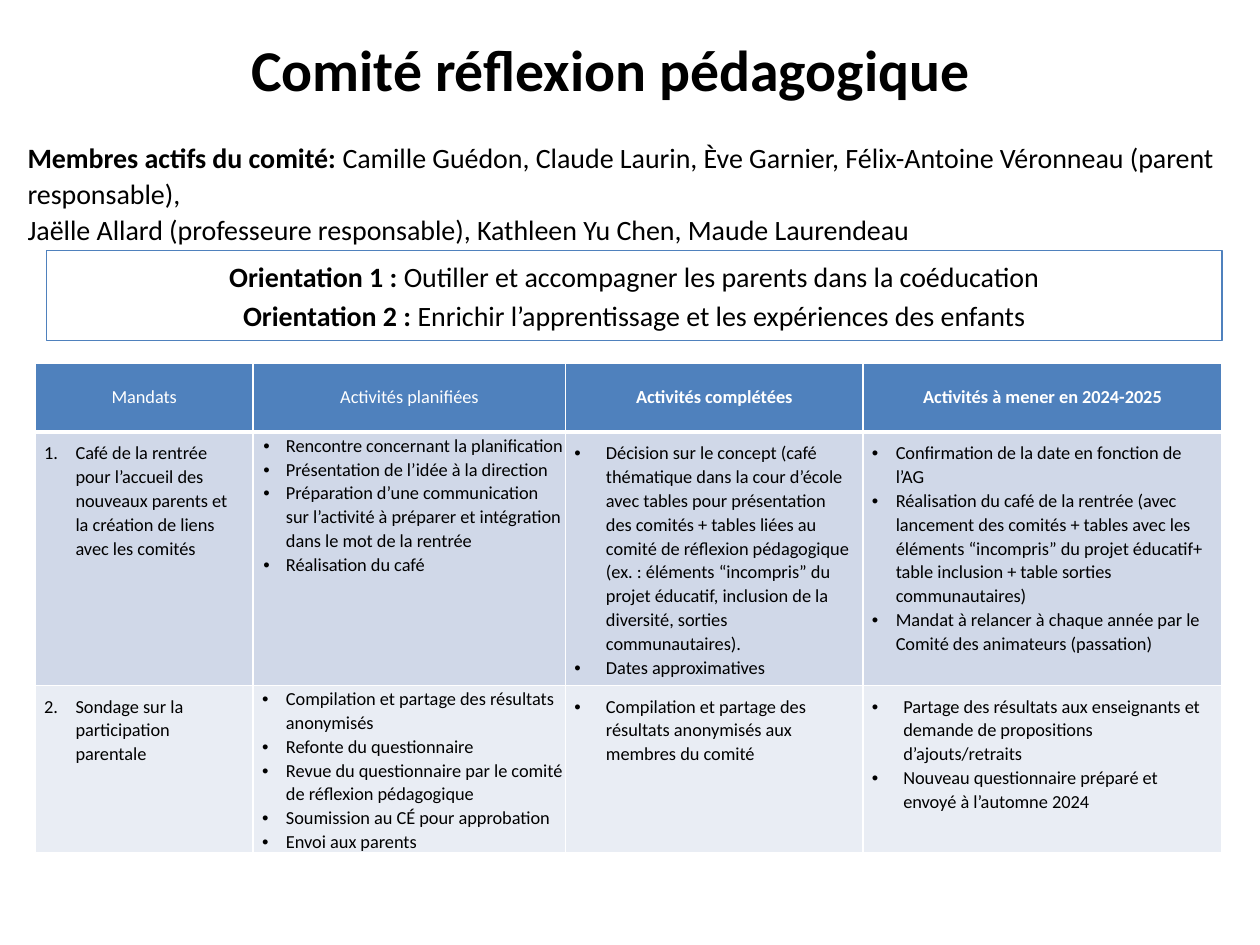
"""Build the slide on the pedagogical reflection committee."""
from lxml import etree
from pptx import Presentation
from pptx import util as u
from pptx.dml.color import RGBColor
from pptx.enum import shapes, text
from pptx.oxml import ns

BLACK = RGBColor(0x00, 0x00, 0x00)
WHITE = RGBColor(0xFF, 0xFF, 0xFF)
BLUE = RGBColor(0x4F, 0x81, 0xBD)
ROW_FILLS = [RGBColor(0xD0, 0xD8, 0xE8), RGBColor(0xE9, 0xED, 0xF4)]
FONT = "Calibri"
CENTER = text.PP_ALIGN.CENTER

TITLE = "Comité réflexion pédagogique"
MEMBERS = [
    [("Membres actifs du comité: ", True),
     ("Camille Guédon, Claude Laurin, Ève Garnier, Félix-Antoine Véronneau (parent responsable),", False)],
    [("Jaëlle Allard (professeure responsable), Kathleen Yu Chen, Maude Laurendeau", False)],
]
ORIENTATIONS = [
    [("Orientation 1 : ", True), ("Outiller et accompagner les parents dans la coéducation", False)],
    [("Orientation 2 : ", True), ("Enrichir l’apprentissage et les expériences des enfants", False)],
]
HEADERS = [("Mandats", False), ("Activités planifiées", False),
           ("Activités complétées", True), ("Activités à mener en 2024-2025", True)]
ROWS = [
    [
        ["Café de la rentrée pour l’accueil des nouveaux parents et la création de liens avec les comités"],
        ["Rencontre concernant la planification",
         "Présentation de l’idée à la direction",
         "Préparation d’une communication sur l’activité à préparer et intégration dans le mot de la rentrée",
         "Réalisation du café"],
        ["Décision sur le concept (café thématique dans la cour d’école avec tables pour présentation "
         "des comités + tables liées au comité de réflexion pédagogique (ex. : éléments “incompris” "
         "du projet éducatif, inclusion de la diversité, sorties communautaires).",
         "Dates approximatives"],
        ["Confirmation de la date en fonction de l’AG",
         "Réalisation du café de la rentrée (avec lancement des comités + tables avec les éléments "
         "“incompris” du projet éducatif+ table inclusion + table sorties communautaires)",
         "Mandat à relancer à chaque année par le Comité des animateurs (passation)"],
    ],
    [
        ["Sondage sur la participation parentale"],
        ["Compilation et partage des résultats anonymisés",
         "Refonte du questionnaire",
         "Revue du questionnaire par le comité de réflexion pédagogique",
         "Soumission au CÉ pour approbation",
         "Envoi aux parents"],
        ["Compilation et partage des résultats anonymisés aux membres du comité"],
        ["Partage des résultats aux enseignants et demande de propositions d’ajouts/retraits",
         "Nouveau questionnaire préparé et envoyé à l’automne 2024"],
    ],
]
COLUMN_WIDTHS = [1.73, 2.48, 2.36, 2.85]
ROW_HEIGHTS = [0.55, 1.79, 1.09]
CELL_INSETS = [0.07, 0.01, 0.07, 0.07]
INDENTS = [[(0.25, 0.25), (0.25, 0.18), (0.25, 0.25), (0.19, 0.19)],
           [(0.25, 0.25), (0.25, 0.19), (0.25, 0.25), (0.25, 0.25)]]


def apply(target, formats):
    for name, value in formats.items():
        setattr(target, name, value)


def write(paragraph, runs, size, color=BLACK, **formats):
    apply(paragraph, formats)
    for words, bold in runs:
        run = paragraph.add_run()
        run.text = words
        apply(run.font, {"name": FONT, "size": u.Pt(size), "bold": bold})
        run.font.color.rgb = color


def paragraphs(frame, count):
    return [frame.paragraphs[0]] + [frame.add_paragraph() for _ in range(count - 1)]


def add_element(parent, tag, **attributes):
    return etree.SubElement(parent, ns.qn(tag), attributes)


def add_bullet(paragraph, indent, number):
    left, hanging = indent
    properties = paragraph._p.get_or_add_pPr()
    properties.set("marL", str(u.Inches(left)))
    properties.set("indent", str(-u.Inches(hanging)))
    add_element(add_element(properties, "a:buClr"), "a:srgbClr", val=str(BLACK))
    if number:
        add_element(properties, "a:buFont", typeface="+mj-lt")
        add_element(properties, "a:buAutoNum", type="arabicPeriod", startAt=str(number))
    else:
        add_element(properties, "a:buFont", typeface="Arial")
        add_element(properties, "a:buChar", char="•")


def style_cell(cell, fill, bottom_width=1):
    properties = cell._tc.get_or_add_tcPr()
    for tag, width in (("a:lnL", 1), ("a:lnR", 1), ("a:lnT", 1), ("a:lnB", bottom_width)):
        line = add_element(properties, tag, w=str(u.Pt(width)))
        add_element(add_element(line, "a:solidFill"), "a:srgbClr", val=str(WHITE))
    cell.fill.solid()
    cell.fill.fore_color.rgb = fill


def add_heading(slide):
    title = slide.shapes.title
    apply(title, {"left": u.Inches(0.59), "top": u.Inches(0.17),
                  "width": u.Inches(8.51), "height": u.Inches(0.75)})
    title.text_frame.vertical_anchor = text.MSO_ANCHOR.MIDDLE
    write(title.text_frame.paragraphs[0], [(TITLE, True)], 33, alignment=CENTER)


def add_members(slide):
    box = slide.shapes.add_textbox(*map(u.Inches, (0.12, 0.92, 9.69, 1.4)))
    frame = box.text_frame
    apply(frame, {"word_wrap": True, "margin_top": u.Inches(0.18)})
    for paragraph, runs in zip(paragraphs(frame, len(MEMBERS)), MEMBERS):
        write(paragraph, runs, 16, line_spacing=1.07)


def add_orientations(slide):
    box = slide.shapes.add_shape(shapes.MSO_SHAPE.RECTANGLE, *map(u.Inches, (0.37, 1.99, 9.33, 0.71)))
    box.shadow.inherit = False
    box.fill.background()
    box.line.color.rgb = BLUE
    box.line.width = u.Pt(0.75)
    frame = box.text_frame
    apply(frame, {"word_wrap": True, "vertical_anchor": text.MSO_ANCHOR.TOP})
    first, second = paragraphs(frame, len(ORIENTATIONS))
    write(first, ORIENTATIONS[0], 16, alignment=CENTER, line_spacing=1.07)
    write(second, ORIENTATIONS[1], 16, alignment=CENTER, space_before=u.Pt(3.2))


def add_activities(slide):
    graphic = slide.shapes.add_table(len(ROW_HEIGHTS), len(COLUMN_WIDTHS),
                                     *map(u.Inches, (0.28, 2.88, 9.42, 3.87)))
    table = graphic.table
    for column, width in zip(table.columns, COLUMN_WIDTHS):
        column.width = u.Inches(width)
    for row, height in zip(table.rows, ROW_HEIGHTS):
        row.height = u.Inches(height)
    graphic.height = u.Inches(3.87)

    for column, header in enumerate(HEADERS):
        cell = table.cell(0, column)
        style_cell(cell, BLUE, bottom_width=3)
        cell.vertical_anchor = text.MSO_ANCHOR.MIDDLE
        write(cell.text_frame.paragraphs[0], [header], 10.5, WHITE, alignment=CENTER)

    for row, contents in enumerate(ROWS):
        for column, items in enumerate(contents):
            cell = table.cell(row + 1, column)
            style_cell(cell, ROW_FILLS[row])
            inset = u.Inches(CELL_INSETS[column])
            apply(cell, {f"margin_{side}": inset for side in ("left", "top", "right", "bottom")})
            for paragraph, item in zip(paragraphs(cell.text_frame, len(items)), items):
                add_bullet(paragraph, INDENTS[row][column], row + 1 if column == 0 else None)
                write(paragraph, [(item, False)], 10.5, line_spacing=1.07)


def main():
    presentation = Presentation()
    apply(presentation, {"slide_width": u.Inches(10), "slide_height": u.Inches(7.5)})
    slide = presentation.slides.add_slide(presentation.slide_layouts[5])
    add_heading(slide)
    add_members(slide)
    add_orientations(slide)
    add_activities(slide)
    presentation.save("out.pptx")


if __name__ == "__main__":
    main()
